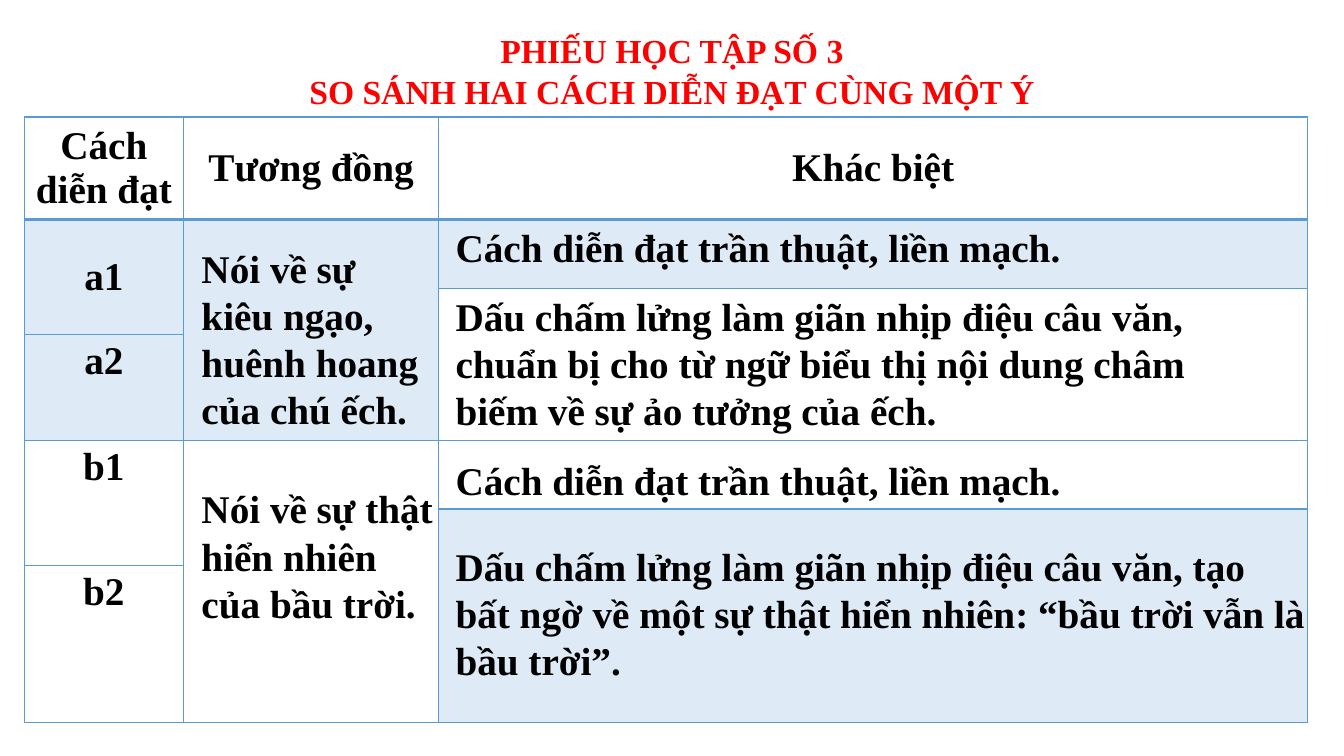
from lxml.etree import SubElement
from pptx import Presentation
from pptx.dml.color import RGBColor
from pptx.enum.text import MSO_ANCHOR, PP_ALIGN
from pptx.oxml.ns import qn
from pptx.util import Inches, Pt

BLACK = RGBColor(0x00, 0x00, 0x00)
RED = RGBColor(0xFF, 0x00, 0x00)
BLUE = RGBColor(0x5B, 0x9B, 0xD5)
FONT = "Times New Roman"

COLUMN_WIDTHS = [1.58, 2.53, 8.62]
ROW_HEIGHTS = [1.02, 0.68, 0.46, 1.05, 0.68, 0.56, 1.56]
MERGES = [(1, 2, 0), (4, 5, 0), (1, 3, 1), (4, 6, 1), (2, 3, 2), (5, 6, 2)]
SHADED = {(1, 0), (2, 0), (3, 0), (1, 1), (2, 1), (3, 1), (1, 2), (5, 2), (6, 2)}
LABELS = {
    (0, 0): "Cách diễn đạt",
    (0, 1): "Tương đồng",
    (0, 2): "Khác biệt",
    (1, 0): "a1",
    (3, 0): "a2",
    (4, 0): "b1",
    (6, 0): "b2",
}
TITLE = ["PHIẾU HỌC TẬP SỐ 3", "SO SÁNH HAI CÁCH DIỄN ĐẠT CÙNG MỘT Ý"]
PLAIN_STYLE = "Cách diễn đạt trần thuật, liền mạch."
ANSWERS = [
    (1.9, 2.37, 2.38, 1.99, "Nói về sự kiêu ngạo, huênh hoang của chú ếch."),
    (1.9, 4.76, 2.52, 1.51, "Nói về sự thật hiển nhiên của bầu trời."),
    (4.42, 2.17, 7.26, 1.04, PLAIN_STYLE),
    (4.42, 2.85, 8.2, 1.51,
     "Dấu chấm lửng làm giãn nhịp điệu câu văn, chuẩn bị cho từ ngữ biểu thị "
     "nội dung châm biếm về sự ảo tưởng của ếch."),
    (4.42, 4.48, 6.33, 0.57, PLAIN_STYLE),
    (4.42, 5.33, 8.62, 1.51,
     "Dấu chấm lửng làm giãn nhịp điệu câu văn, tạo bất ngờ về một sự thật "
     "hiển nhiên: “bầu trời vẫn là bầu trời”."),
]


def write_text(text_frame, lines, size=28, color=BLACK, align=PP_ALIGN.LEFT):
    for index, line in enumerate(lines):
        paragraph = text_frame.add_paragraph() if index else text_frame.paragraphs[0]
        paragraph.alignment = align
        run = paragraph.add_run()
        run.text = line
        run.font.name = FONT
        run.font.size = Pt(size)
        run.font.bold = True
        run.font.color.rgb = color


class Worksheet:
    def __init__(self, slide, accent):
        self.slide = slide
        self.accent = accent

    def text(self, left, top, width, height, lines, **style):
        shape = self.slide.shapes.add_textbox(
            Inches(left), Inches(top), Inches(width), Inches(height))
        shape.text_frame.word_wrap = True
        write_text(shape.text_frame, lines, **style)

    def borders(self, cell, row):
        properties = cell._tc.get_or_add_tcPr()
        widths = {"L": 1, "R": 1, "T": 2 if row == 1 else 1, "B": 2 if row == 0 else 1}
        for position, (side, width) in enumerate(widths.items()):
            line = properties.makeelement(qn(f"a:ln{side}"), {"w": str(Pt(width))})
            fill = SubElement(line, qn("a:solidFill"))
            SubElement(fill, qn("a:srgbClr"), val=str(self.accent))
            properties.insert(position, line)

    def shade(self, cell, shaded):
        if not shaded:
            cell.fill.background()
            return
        cell.fill.solid()
        cell.fill.fore_color.rgb = self.accent
        color = cell._tc.tcPr.find(".//" + qn("a:srgbClr"))
        SubElement(color, qn("a:alpha"), val="20000")

    def table(self, left, top):
        table = self.slide.shapes.add_table(
            len(ROW_HEIGHTS), len(COLUMN_WIDTHS), Inches(left), Inches(top),
            Inches(sum(COLUMN_WIDTHS)), Inches(sum(ROW_HEIGHTS))).table
        table.first_row = table.horz_banding = False
        for column, width in zip(table.columns, COLUMN_WIDTHS):
            column.width = Inches(width)
        for row, height in zip(table.rows, ROW_HEIGHTS):
            row.height = Inches(height)
        for row in range(len(ROW_HEIGHTS)):
            for column in range(len(COLUMN_WIDTHS)):
                cell = table.cell(row, column)
                self.shade(cell, (row, column) in SHADED)
                self.borders(cell, row)
                if (row, column) in LABELS:
                    write_text(cell.text_frame, [LABELS[row, column]], align=PP_ALIGN.CENTER)
                    cell.vertical_anchor = MSO_ANCHOR.MIDDLE if row < 2 else MSO_ANCHOR.TOP
        for first, last, column in MERGES:
            table.cell(first, column).merge(table.cell(last, column))


def main():
    presentation = Presentation()
    presentation.slide_width = Inches(13.33)
    presentation.slide_height = Inches(7.5)
    slide = presentation.slides.add_slide(presentation.slide_layouts[6])
    worksheet = Worksheet(slide, BLUE)
    worksheet.table(0.24, 1.16)
    worksheet.text(1.65, 0.25, 10.03, 0.91, TITLE, size=24, color=RED, align=PP_ALIGN.CENTER)
    for left, top, width, height, answer in ANSWERS:
        worksheet.text(left, top, width, height, [answer])
    presentation.save("out.pptx")


if __name__ == "__main__":
    main()
